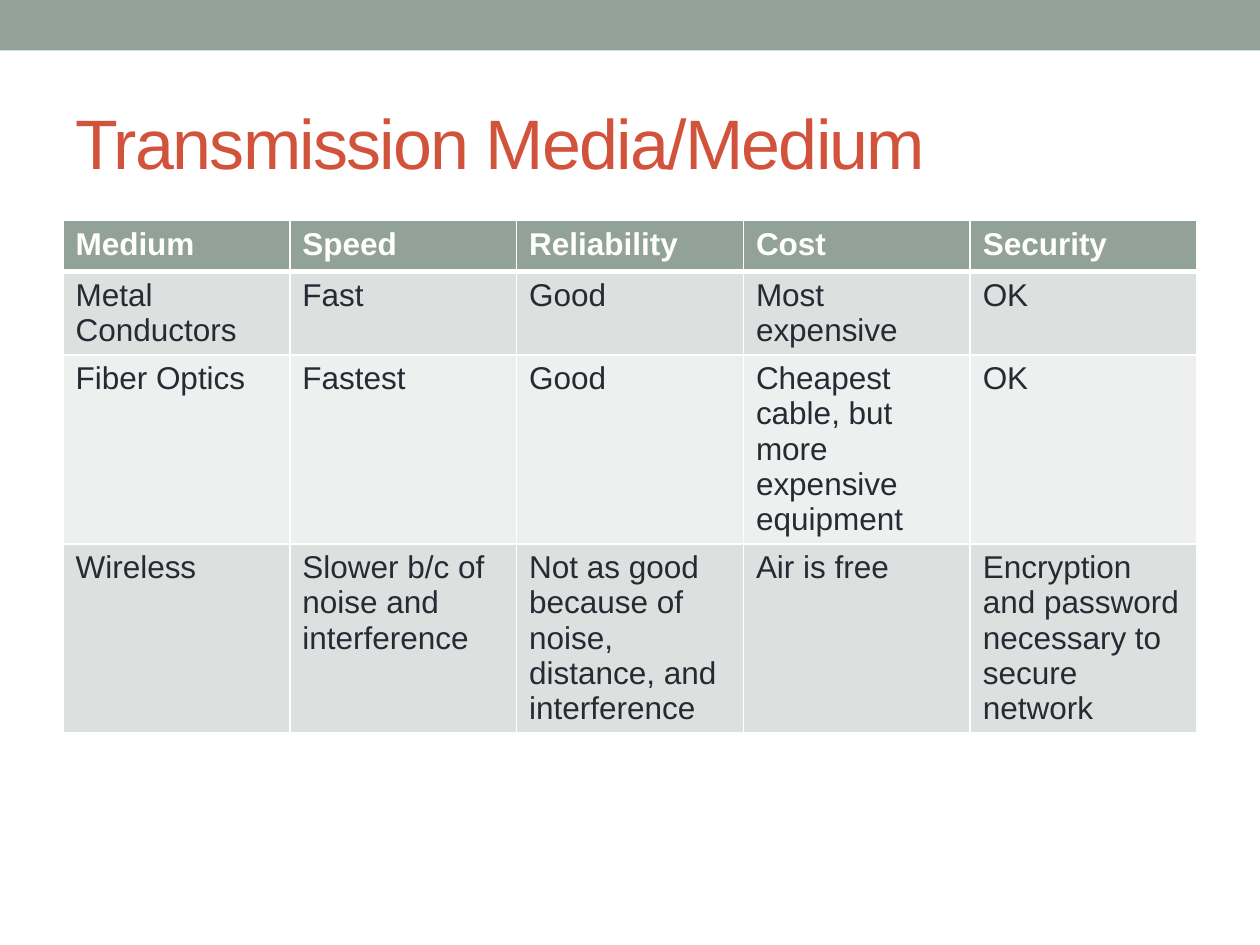
from lxml import etree
from pptx import Presentation
from pptx.dml.color import RGBColor
from pptx.enum.shapes import MSO_SHAPE
from pptx.enum.text import MSO_ANCHOR, PP_ALIGN
from pptx.oxml.ns import qn
from pptx.util import Pt

RECTANGLE = MSO_SHAPE.RECTANGLE
MIDDLE = MSO_ANCHOR.MIDDLE
LEFT = PP_ALIGN.LEFT
TITLE_ONLY = 5

FONT = "Arial"
SAGE, RED, INK, WHITE = "93A299", "D2533C", "292934", "FFFFFF"
BAND_FILLS = ("DCE0DE", "EEF0EF")
ROW_HEIGHT = 29.2

MEDIA = [
    ("Medium", "Speed", "Reliability", "Cost", "Security"),
    ("Metal Conductors", "Fast", "Good", "Most expensive", "OK"),
    ("Fiber Optics", "Fastest", "Good",
     "Cheapest cable, but more expensive equipment", "OK"),
    ("Wireless", "Slower b/c of noise and interference",
     "Not as good because of noise, distance, and interference",
     "Air is free", "Encryption and password necessary to secure network"),
]


def color(hex_code):
    return RGBColor.from_string(hex_code)


def paint(target, hex_code):
    target.fill.solid()
    target.fill.fore_color.rgb = color(hex_code)


def format_font(font, size, hex_code, bold=False):
    font.name = FONT
    font.size = Pt(size)
    font.bold = bold
    font.color.rgb = color(hex_code)


def add_top_band(slide, left, top, width, height):
    band = slide.shapes.add_shape(
        RECTANGLE, Pt(left), Pt(top), Pt(width), Pt(height))
    band.shadow.inherit = False
    paint(band, SAGE)
    band.line.fill.background()


def place_title(slide, left, top, width, height):
    title = slide.shapes.title
    title.left, title.top = Pt(left), Pt(top)
    title.width, title.height = Pt(width), Pt(height)
    title.text_frame.text = "Transmission Media/Medium"
    title.text_frame.vertical_anchor = MIDDLE
    heading = title.text_frame.paragraphs[0]
    heading.alignment = LEFT
    run = heading.runs[0]
    format_font(run.font, 40, RED)
    # Tighten the letters by one point
    run.font._element.set("spc", "-100")


def set_borders(cell, top, bottom):
    """Draw white borders; they must precede the fill in the cell's XML."""
    properties = cell._tc.get_or_add_tcPr()
    sides = {"a:lnL": 1, "a:lnR": 1, "a:lnT": top, "a:lnB": bottom}
    for position, (side, points) in enumerate(sides.items()):
        border = etree.Element(qn(side), w=str(Pt(points)))
        fill = etree.SubElement(border, qn("a:solidFill"))
        etree.SubElement(fill, qn("a:srgbClr"), val=WHITE)
        properties.insert(position, border)


def add_media_table(slide, left, top, width):
    columns = len(MEDIA[0])
    table = slide.shapes.add_table(
        len(MEDIA), columns, Pt(left), Pt(top),
        Pt(width), Pt(ROW_HEIGHT * len(MEDIA))).table
    for column in table.columns:
        column.width = Pt(width / columns)
    for r, texts in enumerate(MEDIA):
        table.rows[r].height = Pt(ROW_HEIGHT)
        header = r == 0
        for c, text in enumerate(texts):
            cell = table.cell(r, c)
            paint(cell, SAGE if header else BAND_FILLS[(r - 1) % 2])
            # A heavier rule separates the header from the body
            set_borders(cell, top=3 if r == 1 else 1, bottom=3 if header else 1)
            cell.text_frame.text = text
            format_font(cell.text_frame.paragraphs[0].runs[0].font,
                        18, WHITE if header else INK, header)


def main():
    deck = Presentation()
    deck.slide_width, deck.slide_height = Pt(720), Pt(540)
    slide = deck.slides.add_slide(deck.slide_layouts[TITLE_ONLY])
    add_top_band(slide, 0, 0, 720, 28.8)
    place_title(slide, 36, 42, 648, 78)
    add_media_table(slide, 36, 126, 648)
    deck.save("out.pptx")


if __name__ == "__main__":
    main()
